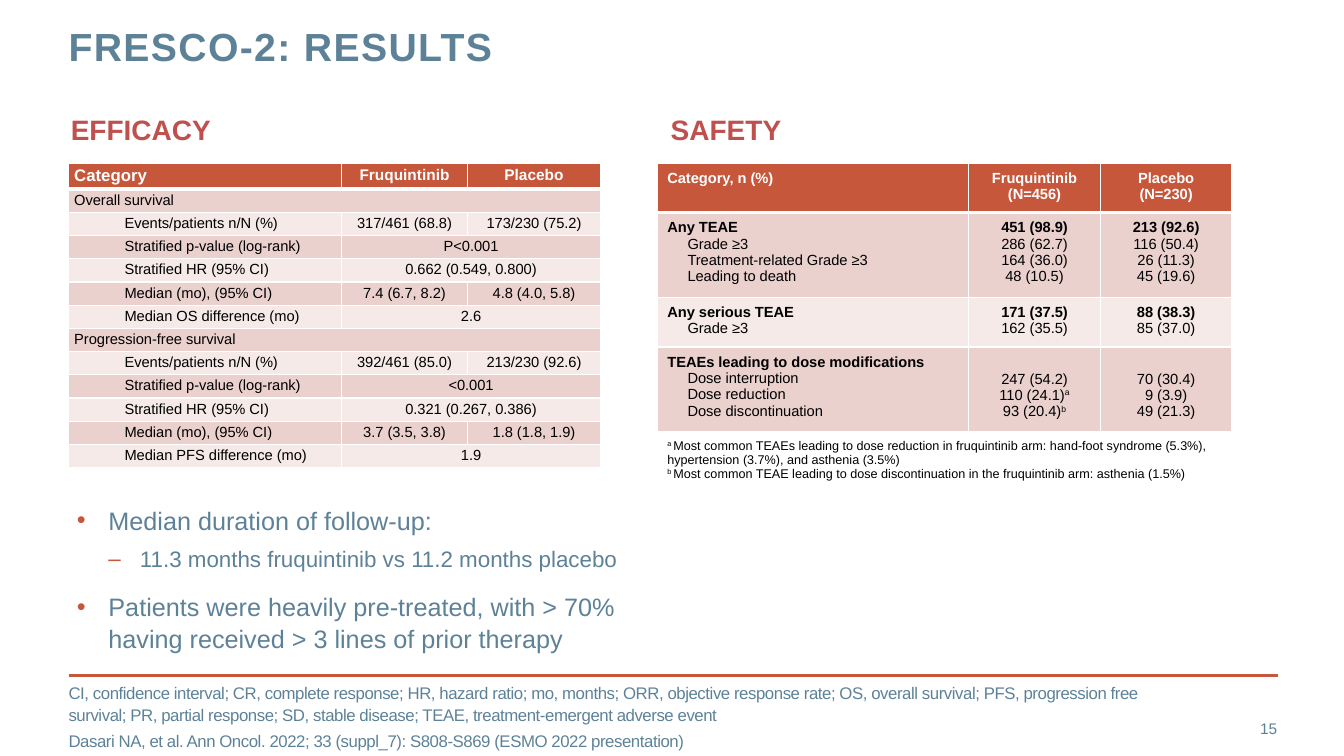
from pptx import Presentation
from pptx.dml.color import RGBColor
from pptx.enum.shapes import MSO_CONNECTOR as Line
from pptx.enum.text import MSO_ANCHOR as Anchor, PP_ALIGN as Align
from pptx.oxml.ns import qn
from pptx.util import Pt
from lxml.etree import SubElement as Sub

rgb = RGBColor.from_string
RUST, BLUE, RED, WHITE, BLACK = "C6573B", "5D8298", "C0504D", "FFFFFF", "000000"
BANDS = ["F5EAE8", "EAD1CE"]

deck = Presentation()
deck.slide_width, deck.slide_height = Pt(960), Pt(540)
slide = deck.slides.add_slide(deck.slide_layouts[6])
shapes = slide.shapes


def text(frame, words, size=10.5, color=BLACK, bold=False, align=Align.LEFT,
         left=0, hang=0, bullet=None, before=0, after=0, lead=None, track=0):
    """Add one paragraph; every second part between ^ marks is superscript."""
    para = frame.paragraphs[0]
    if para.runs:
        para = frame.add_paragraph()
    para.alignment = align
    para.space_before, para.space_after = Pt(before), Pt(after)
    if lead:
        para.line_spacing = lead
    props = para._p.get_or_add_pPr()
    props.set("marL", str(Pt(left)))
    props.set("indent", str(Pt(-hang)))
    if bullet:
        Sub(Sub(props, qn("a:buClr")), qn("a:srgbClr"), val=RUST)
        Sub(props, qn("a:buFont"), typeface="Arial")
        Sub(props, qn("a:buChar"), char=bullet)
    for i, part in enumerate(words.split("^")):
        if not part:
            continue
        run = para.add_run()
        run.text = part
        font = run.font
        font.name, font.size, font.bold = "Arial", Pt(size), bold
        font.color.rgb = rgb(color)
        attrs = run._r.get_or_add_rPr()
        if track:
            attrs.set("spc", str(int(track * 100)))
        if i % 2:
            attrs.set("baseline", "30000")


def grid(left, widths, heights, padx, pady):
    """Add a banded table with white borders; its last row has no fill."""
    table = shapes.add_table(len(heights), len(widths), Pt(left), Pt(116.7),
                             Pt(sum(widths)), Pt(sum(heights))).table
    table.horz_banding = False
    for col, width in zip(table.columns, widths):
        col.width = Pt(width)
    for r, height in enumerate(heights):
        table.rows[r].height = Pt(height)
        for cell in table.rows[r].cells:
            cell.margin_left = cell.margin_right = Pt(padx)
            cell.margin_top = cell.margin_bottom = Pt(pady)
            props = cell._tc.get_or_add_tcPr()
            for side in "LRTB":
                thick = (r, side) in [(0, "B"), (1, "T")]
                edge = Sub(props, qn("a:ln" + side), w=str(Pt(3 if thick else 1)))
                Sub(Sub(edge, qn("a:solidFill")), qn("a:srgbClr"), val=WHITE)
            if r == len(heights) - 1:
                cell.fill.background()
            else:
                cell.fill.solid()
                cell.fill.fore_color.rgb = rgb(BANDS[r % 2] if r else RUST)
    return table


# Rule above the footer
rule = shapes.add_connector(Line.STRAIGHT, Pt(49), Pt(482.4), Pt(913), Pt(482.4))
rule.line.color.rgb = rgb(RUST)
rule.line.width = Pt(2)
Sub(rule._element.spPr, qn("a:effectLst"))

# Text boxes: place, padding, wrap, anchor, paragraphs
TOP, MID = Anchor.TOP, Anchor.MIDDLE
head = dict(size=20, color=RED, bold=True)
main = dict(size=18, color=BLUE, left=22.5, hang=22.5, bullet="•", lead=1.07)
sub = dict(main, size=16, left=45, bullet="–", before=6)
foot = dict(size=12, color=BLUE, after=3, lead=1.07, track=-0.3)
boxes = [
    ((49, 19.5, 688, 63), (0, 0), True, TOP, [
        ("FRESCO-2: RESULTS",
         dict(size=28, color=BLUE, bold=True, lead=Pt(30), track=1))]),
    ((43.5, 76.5, 116, 31.5), (7.2, 3.6), False, TOP, [("EFFICACY", head)]),
    ((472, 76.5, 94, 31.5), (7.2, 3.6), False, TOP, [("SAFETY", head)]),
    ((55, 359.3, 404, 44), (0, 0), True, TOP, [
        ("Median duration of follow-up:", main),
        ("11.3 months fruquintinib vs 11.2 months placebo", sub),
        ("Patients were heavily pre-treated, with > 70% having received > 3 lines "
         "of prior therapy", dict(main, before=12))]),
    ((49, 497, 801, 29), (0, 0), True, MID, [
        ("CI, confidence interval; CR, complete response; HR, hazard ratio; mo, months; "
         "ORR, objective response rate; OS, overall survival; PFS, progression free "
         "survival; PR, partial response; SD, stable disease; TEAE, treatment-emergent "
         "adverse event", foot),
        ("Dasari NA, et al. Ann Oncol. 2022; 33 (suppl_7): S808-S869 "
         "(ESMO 2022 presentation)", foot)]),
    ((850, 506, 62.3, 29), (0, 0), True, MID, [
        ("15", dict(size=11, color=BLUE, align=Align.RIGHT))]),
]
for place, (padx, pady), wrap, anchor, paras in boxes:
    frame = shapes.add_textbox(*map(Pt, place)).text_frame
    frame.margin_left = frame.margin_right = Pt(padx)
    frame.margin_top = frame.margin_bottom = Pt(pady)
    frame.word_wrap, frame.vertical_anchor = wrap, anchor
    for words, style in paras:
        text(frame, words, **style)

# Efficacy table: short rows are merged to the right
rows = [
    ("Category", "Fruquintinib", "Placebo"),
    ("Overall survival",),
    ("Events/patients n/N (%)", "317/461 (68.8)", "173/230 (75.2)"),
    ("Stratified p-value (log-rank)", "P<0.001"),
    ("Stratified HR (95% CI)", "0.662 (0.549, 0.800)"),
    ("Median (mo), (95% CI)", "7.4 (6.7, 8.2)", "4.8 (4.0, 5.8)"),
    ("Median OS difference (mo)", "2.6"),
    ("Progression-free survival",),
    ("Events/patients n/N (%)", "392/461 (85.0)", "213/230 (92.6)"),
    ("Stratified p-value (log-rank)", "<0.001"),
    ("Stratified HR (95% CI)", "0.321 (0.267, 0.386)"),
    ("Median (mo), (95% CI)", "3.7 (3.5, 3.8)", "1.8 (1.8, 1.9)"),
    ("Median PFS difference (mo)", "1.9"),
    (),
]
table = grid(49, [195, 90, 95], [18] + [16.2] * 12 + [27], 4, 2)
for r, row in enumerate(rows):
    if len(row) < 3:
        table.cell(r, max(len(row) - 1, 0)).merge(table.cell(r, 2))
    for c, words in enumerate(row):
        style = dict(align=Align.CENTER) if c else dict(left=36 if r and len(row) > 1 else 0)
        if r == 0:
            style.update(size=11 if c else 12, color=WHITE, bold=True)
        text(table.cell(r, c).text_frame, words, **style)

# Safety table: one list of lines per cell
groups = [
    (["Category, n (%)"], ["Fruquintinib", "(N=456)"], ["Placebo", "(N=230)"]),
    (["Any TEAE", "Grade ≥3", "Treatment-related Grade ≥3", "Leading to death"],
     ["451 (98.9)", "286 (62.7)", "164 (36.0)", "48 (10.5)"],
     ["213 (92.6)", "116 (50.4)", "26 (11.3)", "45 (19.6)"]),
    (["Any serious TEAE", "Grade ≥3"],
     ["171 (37.5)", "162 (35.5)"], ["88 (38.3)", "85 (37.0)"]),
    (["TEAEs leading to dose modifications", "Dose interruption", "Dose reduction",
      "Dose discontinuation"],
     ["247 (54.2)", "110 (24.1)^a", "93 (20.4)^b"],
     ["70 (30.4)", "9 (3.9)", "49 (21.3)"]),
]
table = grid(469.5, [222.5, 94, 94], [35, 60.5, 35.5, 60.5, 43], 7.2, 5)
for r, group in enumerate(groups):
    for c, lines in enumerate(group):
        cell = table.cell(r, c)
        gap = len(group[0]) - len(lines) if r else 0
        cell.margin_top = Pt(5 + 12 * gap)
        for i, words in enumerate(lines):
            text(cell.text_frame, words, color=BLACK if r else WHITE,
                 bold=r == 0 or i + gap == 0, left=14.4 if i and c == 0 else 0,
                 align=Align.CENTER if c else Align.LEFT)

# Footnotes in the last row
notes = table.cell(4, 0)
notes.merge(table.cell(4, 2))
for words in [
    "^a ^Most common TEAEs leading to dose reduction in fruquintinib arm: hand-foot "
    "syndrome (5.3%), hypertension (3.7%), and asthenia (3.5%)",
    "^b ^Most common TEAE leading to dose discontinuation in the fruquintinib arm: "
    "asthenia (1.5%)",
]:
    text(notes.text_frame, words, size=9)

deck.save("out.pptx")
